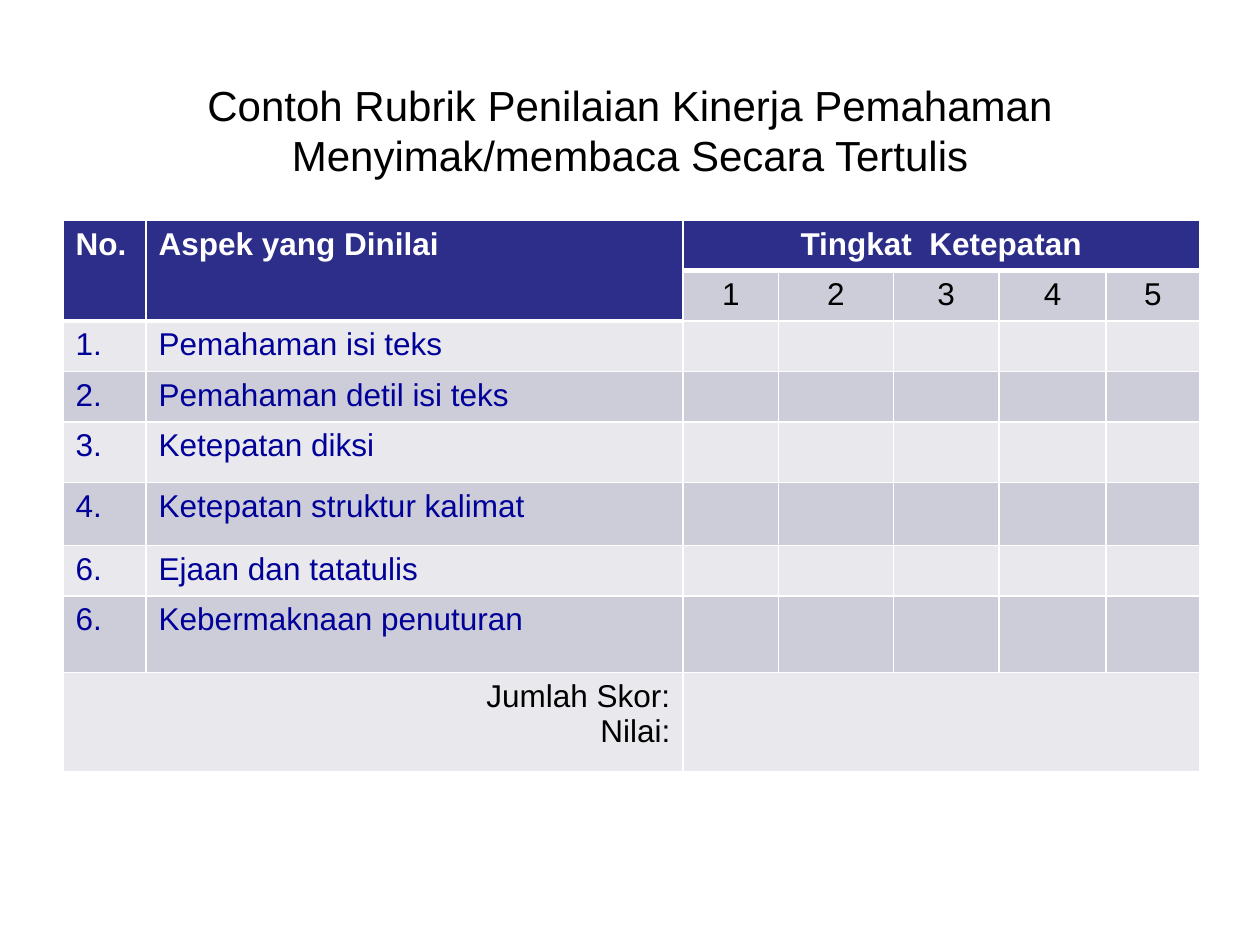
import pptx
import pptx.dml.color
import pptx.enum.text
import pptx.oxml
import pptx.oxml.ns
import pptx.util

WHITE = pptx.dml.color.RGBColor(0xFF, 0xFF, 0xFF)
BLACK = pptx.dml.color.RGBColor(0x00, 0x00, 0x00)
NAVY = pptx.dml.color.RGBColor(0x2D, 0x2D, 0x8A)
BLUE = pptx.dml.color.RGBColor(0x00, 0x00, 0x99)
BAND_DARK = pptx.dml.color.RGBColor(0xCD, 0xCD, 0xDA)
BAND_LIGHT = pptx.dml.color.RGBColor(0xE8, 0xE8, 0xED)

ALIGN = pptx.enum.text.PP_ALIGN
TITLE = "Contoh Rubrik Penilaian Kinerja Pemahaman Menyimak/membaca Secara Tertulis"
TITLE_BOX = (0.05, 0.067, 0.9, 0.14)
RUBRIC_BOX = (0.05, 0.233, 0.902, 0.577)
COLUMN_WEIGHTS = (0.66, 4.26, 0.76, 0.91, 0.84, 0.85, 0.74)
ROW_WEIGHTS = (0.39, 0.39, 0.39, 0.39, 0.48, 0.5, 0.39, 0.61, 0.79)
ASPECTS = (
    ("1.", "Pemahaman isi teks"),
    ("2.", "Pemahaman detil isi teks"),
    ("3.", "Ketepatan diksi"),
    ("4.", "Ketepatan struktur kalimat"),
    ("6.", "Ejaan dan tatatulis"),
    ("6.", "Kebermaknaan penuturan"),
)
MERGES = ((0, 0, 1, 0), (0, 1, 1, 1), (0, 2, 0, 6), (8, 0, 8, 1), (8, 2, 8, 6))
LABEL_COLUMNS = 2

TITLE_FORMAT = {"name": "Arial", "size": pptx.util.Pt(24), "bold": False}
BODY_FORMAT = {"name": "Arial", "size": pptx.util.Pt(18), "bold": False}
HEADER_FORMAT = {**BODY_FORMAT, "bold": True}


def scale_box(presentation, shares):
    """Turn shares of the slide's size into lengths."""
    sides = (presentation.slide_width, presentation.slide_height) * 2
    return [round(share * side) for share, side in zip(shares, sides)]


def write_text(text_frame, text, font_format, color, alignment=ALIGN.LEFT):
    """Fill a text frame with evenly formatted paragraphs."""
    text_frame.text = text
    for paragraph in text_frame.paragraphs:
        paragraph.alignment = alignment
        for name, value in font_format.items():
            setattr(paragraph.font, name, value)
        paragraph.font.color.rgb = color


def add_title(slide, box):
    """Place the centred title in its box."""
    text_frame = slide.shapes.add_textbox(*box).text_frame
    text_frame.word_wrap = True
    text_frame.vertical_anchor = pptx.enum.text.MSO_ANCHOR.MIDDLE
    write_text(text_frame, TITLE, TITLE_FORMAT, BLACK, ALIGN.CENTER)


def set_borders(cell, widths):
    """Draw white borders of the given widths in points."""
    properties = cell._tc.get_or_add_tcPr()
    for side, width in widths.items():
        properties.append(pptx.oxml.parse_xml(
            f'<a:ln{side} {pptx.oxml.ns.nsdecls("a")} w="{pptx.util.Pt(width)}">'
            f'<a:solidFill><a:srgbClr val="{WHITE}"/></a:solidFill></a:ln{side}>'))


def style_cell(cell, row, column):
    """Give a cell its borders and the fill of its header or band."""
    header_depth = 2 if column < LABEL_COLUMNS else 1
    set_borders(cell, {
        "L": 1, "R": 1,
        "T": 3 if row == header_depth else 1,
        "B": 3 if row < header_depth else 1,
    })
    cell.fill.solid()
    band = BAND_DARK if row % 2 else BAND_LIGHT
    cell.fill.fore_color.rgb = NAVY if row < header_depth else band


def add_rubric(slide, box):
    """Place the scoring rubric table in its box."""
    left, top, width, height = box
    table = slide.shapes.add_table(
        len(ROW_WEIGHTS), len(COLUMN_WEIGHTS), left, top, width, height).table
    for column, weight in zip(table.columns, COLUMN_WEIGHTS):
        column.width = round(width * weight / sum(COLUMN_WEIGHTS))
    for row, weight in zip(table.rows, ROW_WEIGHTS):
        row.height = round(height * weight / sum(ROW_WEIGHTS))
    for row in range(len(ROW_WEIGHTS)):
        for column in range(len(COLUMN_WEIGHTS)):
            style_cell(table.cell(row, column), row, column)
    for first_row, first_column, last_row, last_column in MERGES:
        table.cell(first_row, first_column).merge(table.cell(last_row, last_column))

    entries = [
        (0, 0, "No.", HEADER_FORMAT, WHITE, ALIGN.LEFT),
        (0, 1, "Aspek yang Dinilai", HEADER_FORMAT, WHITE, ALIGN.LEFT),
        (0, 2, "Tingkat  Ketepatan", HEADER_FORMAT, WHITE, ALIGN.CENTER),
        (8, 0, "Jumlah Skor:\nNilai:", BODY_FORMAT, BLACK, ALIGN.RIGHT),
    ]
    entries += [(1, score + 1, str(score), BODY_FORMAT, BLACK, ALIGN.CENTER)
                for score in range(1, 6)]
    entries += [(row, column, text, BODY_FORMAT, BLUE, ALIGN.LEFT)
                for row, aspect in enumerate(ASPECTS, 2)
                for column, text in enumerate(aspect)]
    for row, column, *content in entries:
        write_text(table.cell(row, column).text_frame, *content)


def main():
    """Build and save the slide."""
    presentation = pptx.Presentation()
    presentation.slide_width = pptx.util.Inches(10)
    presentation.slide_height = pptx.util.Inches(7.5)
    slide = presentation.slides.add_slide(presentation.slide_layouts[6])
    add_title(slide, scale_box(presentation, TITLE_BOX))
    add_rubric(slide, scale_box(presentation, RUBRIC_BOX))
    presentation.save("out.pptx")


if __name__ == "__main__":
    main()
